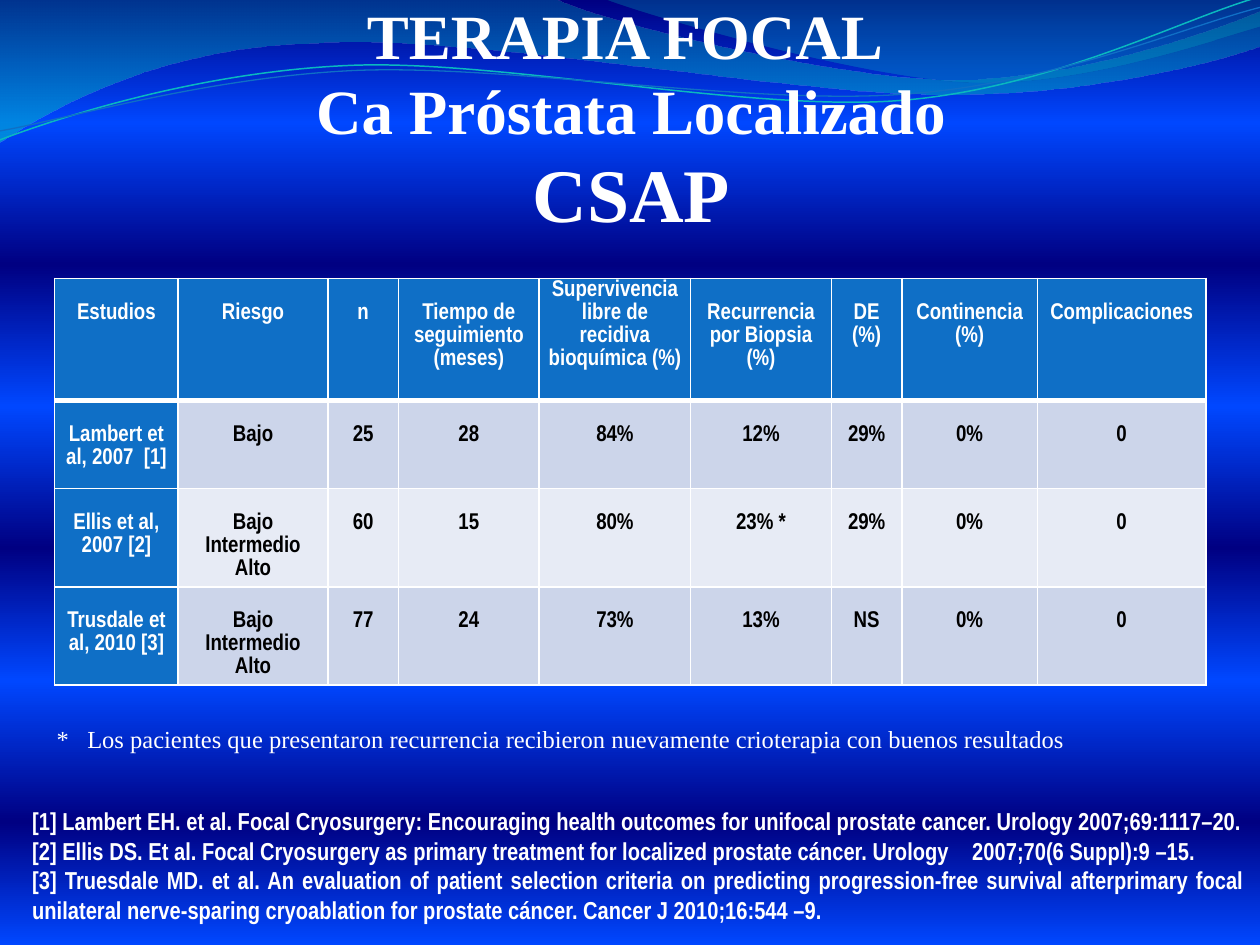
from lxml.etree import SubElement
from pptx import Presentation
from pptx.dml.color import RGBColor
from pptx.enum.text import MSO_ANCHOR, PP_ALIGN
from pptx.oxml.ns import qn
from pptx.util import Cm, Pt

WHITE, BLACK, BLUE = "FFFFFF", "000000", "0F6FC6"
BANDS = ("CCD5EA", "E7EBF5")
SERIF, NARROW = "Times New Roman", "Arial Narrow"
NIGHT, BRIGHT = "000082", "0047FF"
BACKGROUND_POSITIONS = (0, 13, 28, 43, 58, 72, 87, 100)

WAVES = [
    ([(0, 0), (11.18, -0.03),
      (12.09, 0.43, 16.87, 1.6, 19.25, 1.6), (21.67, 1.6, 24.33, 0.66, 25.4, 0.23),
      (25.43, 0.91), (24.97, 1.12, 22.1, 1.93, 18.95, 1.9),
      (15.8, 1.9, 9.7, 0.71, 6.53, 0.86), (3.28, 0.91, 1.17, 2.11, -0.03, 2.87)],
     [(0, "0074A1", 45), (100, "00C6CF", 55)]),
    ([(12.17, -0.03), (12.93, 0.28, 17.32, 1.57, 19.53, 1.65),
      (21.74, 1.75, 24.41, 0.81, 25.4, 0.53), (25.4, 0)],
     [(0, "00A1A9", 30), (80, "008BBF", 45)]),
]
STRANDS = [
    ([(0, 2.82), (1.22, 2.36, 4.01, 1.45, 7.04, 1.32),
      (10.03, 1.19, 15.06, 2.26, 18.11, 2.03), (21.16, 1.8, 23.83, 0.38, 25.35, -0.05)],
     "0AB8BF", 0.85),
    ([(0, 2.64), (1.19, 2.44, 4.17, 1.55, 7.19, 1.42),
      (10.24, 1.3, 15.16, 2.13, 18.21, 1.9), (21.23, 1.7, 23.9, 0.53, 25.4, 0.15)],
     BLUE, 0.75),
]

COLUMN_WIDTHS = (2.49, 3.02, 1.42, 2.84, 3.05, 2.84, 1.42, 2.73, 3.4)
ROW_HEIGHTS = (2.46, 1.78, 1.98, 1.98)
TALL_HEADING = "Supervivencia libre de recidiva bioquímica (%)"
STUDIES = [
    ["Estudios", "Riesgo", "n", "Tiempo de seguimiento (meses)", TALL_HEADING,
     "Recurrencia por Biopsia\n(%)", "DE (%)", "Continencia (%)", "Complicaciones"],
    ["Lambert et al, 2007  [1]", "Bajo", "25", "28", "84%", "12%", "29%", "0%", "0"],
    ["Ellis et al, 2007 [2]", "Bajo\nIntermedio\nAlto", "60", "15", "80%", "23% *", "29%", "0%", "0"],
    ["Trusdale et al, 2010 [3]", "Bajo\nIntermedio\nAlto", "77", "24", "73%", "13%", "NS", "0%", "0"],
]
REFERENCES = [
    "[1] Lambert EH. et al. Focal Cryosurgery: Encouraging health outcomes for unifocal prostate "
    "cancer. Urology 2007;69:1117–20.",
    "[2] Ellis DS. Et al. Focal Cryosurgery as primary treatment for localized prostate cáncer. "
    "Urology\t2007;70(6 Suppl):9 –15.",
    "[3] Truesdale MD. et al. An evaluation of patient selection criteria on predicting "
    "progression-free survival afterprimary focal unilateral nerve-sparing cryoablation for "
    "prostate cáncer. Cancer J 2010;16:544 –9.",
]


def color(value):
    return RGBColor.from_string(value)


def style(para, font, size, ink, bold, align):
    para.alignment = align
    for span in para.runs:
        span.font.name = font
        span.font.size = Pt(size)
        span.font.bold = bold
        span.font.color.rgb = color(ink)


def paint_gradient(fill, element, stops):
    fill.gradient()
    fill.gradient_angle = 270
    stop_list = element.find(".//" + qn("a:gsLst"))
    for stop in list(stop_list):
        stop_list.remove(stop)
    for position, value, opacity in stops:
        stop = SubElement(stop_list, qn("a:gs"), pos=str(position * 1000))
        tint = SubElement(stop, qn("a:srgbClr"), val=value)
        if opacity < 100:
            SubElement(tint, qn("a:alpha"), val=str(opacity * 1000))


def bend(shape, segments):
    lines = iter(shape.element.findall(".//" + qn("a:lnTo")))
    for segment in segments[1:]:
        first = next(lines)
        if len(segment) == 6:
            first.tag = qn("a:cubicBezTo")
            for line in (next(lines), next(lines)):
                first.append(line[0])
                line.getparent().remove(line)


def add_outline(page, left, top, segments, closed):
    points = [(left + Cm(x), top + Cm(y))
              for segment in segments for x, y in zip(segment[::2], segment[1::2])]
    builder = page.shapes.build_freeform(*points[0])
    builder.add_line_segments(points[1:], close=closed)
    shape = builder.convert_to_shape()
    bend(shape, segments)
    shape.shadow.inherit = False
    return shape


def add_backdrop(page, left, top):
    stops = [(position, (NIGHT, BRIGHT)[index % 2], 100)
             for index, position in enumerate(BACKGROUND_POSITIONS)]
    paint_gradient(page.background.fill, page.element, stops)
    for segments, tints in WAVES:
        wave = add_outline(page, left, top, segments, True)
        paint_gradient(wave.fill, wave.element, tints)
        wave.line.fill.background()
    for segments, ink, width in STRANDS:
        strand = add_outline(page, left, top, segments, False)
        strand.fill.background()
        strand.line.color.rgb = color(ink)
        strand.line.width = Pt(width)


def add_text(page, left, top, width, height, text):
    box = page.shapes.add_textbox(left, top, width, height)
    box.text_frame.word_wrap = True
    box.text_frame.text = text
    return box.text_frame


def add_title(page, left, top, width, height):
    frame = add_text(page, left, top, width, height,
                     "TERAPIA FOCAL \vCa Próstata Localizado\vCSAP")
    frame.margin_left = frame.margin_right = 0
    frame.margin_bottom = Cm(3.73)
    frame.vertical_anchor = MSO_ANCHOR.BOTTOM
    para = frame.paragraphs[0]
    style(para, SERIF, 36, WHITE, True, PP_ALIGN.CENTER)
    para.runs[-1].font.size = Pt(43.2)


def add_border(cell, side, width):
    line = SubElement(cell._tc.get_or_add_tcPr(), qn("a:" + side), w=str(Pt(width)))
    SubElement(SubElement(line, qn("a:solidFill")), qn("a:srgbClr"), val=WHITE)


def fill_cell(cell, text, row, column):
    heading = row == 0 or column == 0
    for side, width in (("lnL", 1), ("lnR", 1), ("lnT", 3 if row == 1 else 1), ("lnB", 3 if row == 0 else 1)):
        add_border(cell, side, width)
    cell.fill.solid()
    cell.fill.fore_color.rgb = color(BLUE if heading else BANDS[(row - 1) % 2])
    cell.margin_left = cell.margin_right = Cm(0.18)
    cell.margin_top = Cm(0 if text == TALL_HEADING else 0.46)
    cell.margin_bottom = 0
    cell.vertical_anchor = MSO_ANCHOR.TOP
    cell.text_frame.text = text
    for para in cell.text_frame.paragraphs:
        style(para, NARROW, 13, WHITE if heading else BLACK, True, PP_ALIGN.CENTER)
        para.line_spacing = Pt(13.1)


def add_studies(page, left, top):
    table = page.shapes.add_table(len(ROW_HEIGHTS), len(COLUMN_WIDTHS), left, top,
                                  Cm(sum(COLUMN_WIDTHS)), Cm(sum(ROW_HEIGHTS))).table
    for column, width in zip(table.columns, COLUMN_WIDTHS):
        column.width = Cm(width)
    for row, height in zip(table.rows, ROW_HEIGHTS):
        row.height = Cm(height)
    for row, texts in enumerate(STUDIES):
        for column, text in enumerate(texts):
            fill_cell(table.cell(row, column), text, row, column)


def add_footnote(page, left, top, width, height):
    frame = add_text(page, left, top, width, height,
                     "*\tLos pacientes que presentaron recurrencia recibieron nuevamente "
                     "crioterapia con buenos resultados")
    para = frame.paragraphs[0]
    style(para, SERIF, 14, WHITE, False, PP_ALIGN.LEFT)
    properties = para._p.get_or_add_pPr()
    properties.set("marL", str(Cm(0.62)))
    properties.set("indent", str(-Cm(0.62)))


def add_references(page, left, top, width, height):
    frame = add_text(page, left, top, width, height, "\n".join(REFERENCES))
    for para in frame.paragraphs:
        style(para, NARROW, 14, WHITE, True, PP_ALIGN.JUSTIFY)
    tabs = SubElement(frame.paragraphs[1]._p.get_or_add_pPr(), qn("a:tabLst"))
    SubElement(tabs, qn("a:tab"), pos=str(Cm(18.95)), algn="l")


def main():
    deck = Presentation()
    deck.slide_width, deck.slide_height = Cm(25.4), Cm(19.05)
    page = deck.slides.add_slide(deck.slide_layouts[6])
    add_backdrop(page, Cm(0), Cm(0))
    add_title(page, Cm(0), Cm(0.53), Cm(25.45), Cm(8))
    add_studies(page, Cm(1.1), Cm(5.61))
    add_footnote(page, Cm(0.89), Cm(14.48), Cm(22.2), Cm(1.63))
    add_references(page, Cm(0.4), Cm(16.13), Cm(24.95), Cm(2.64))
    deck.save("out.pptx")


if __name__ == "__main__":
    main()
